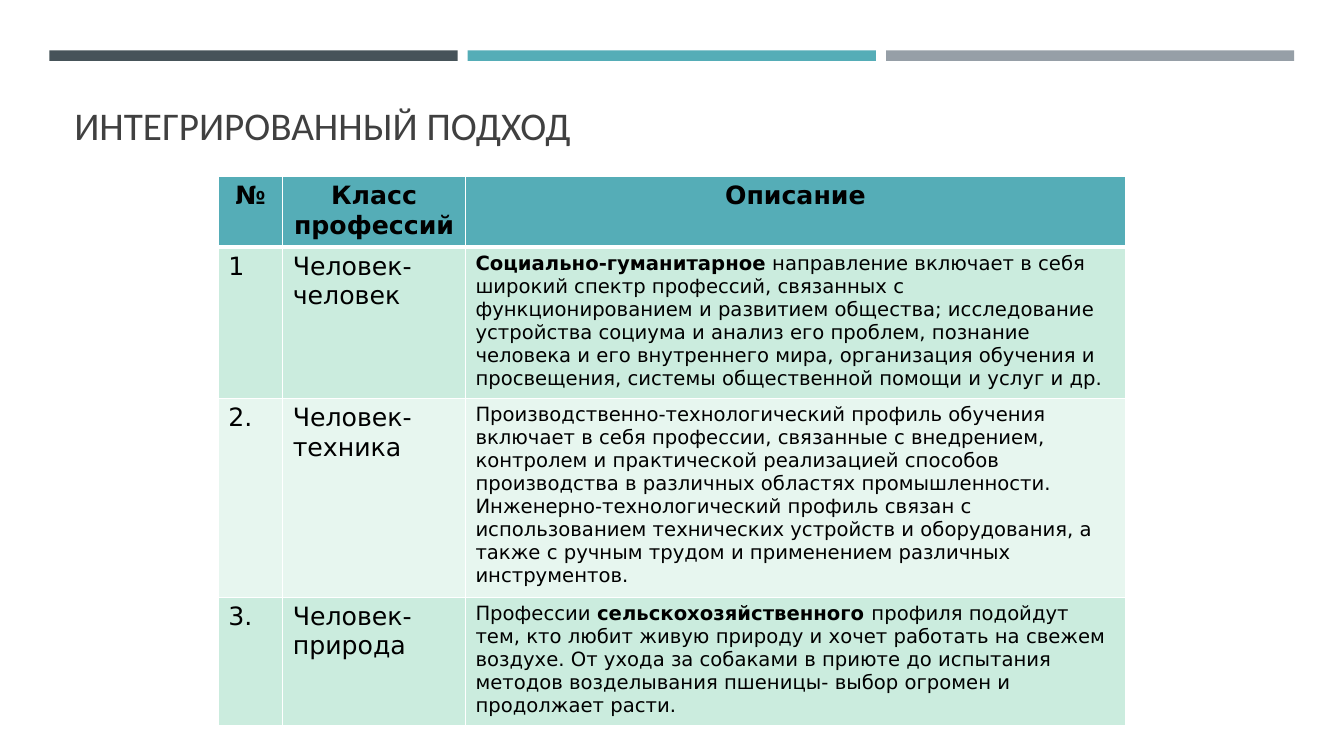
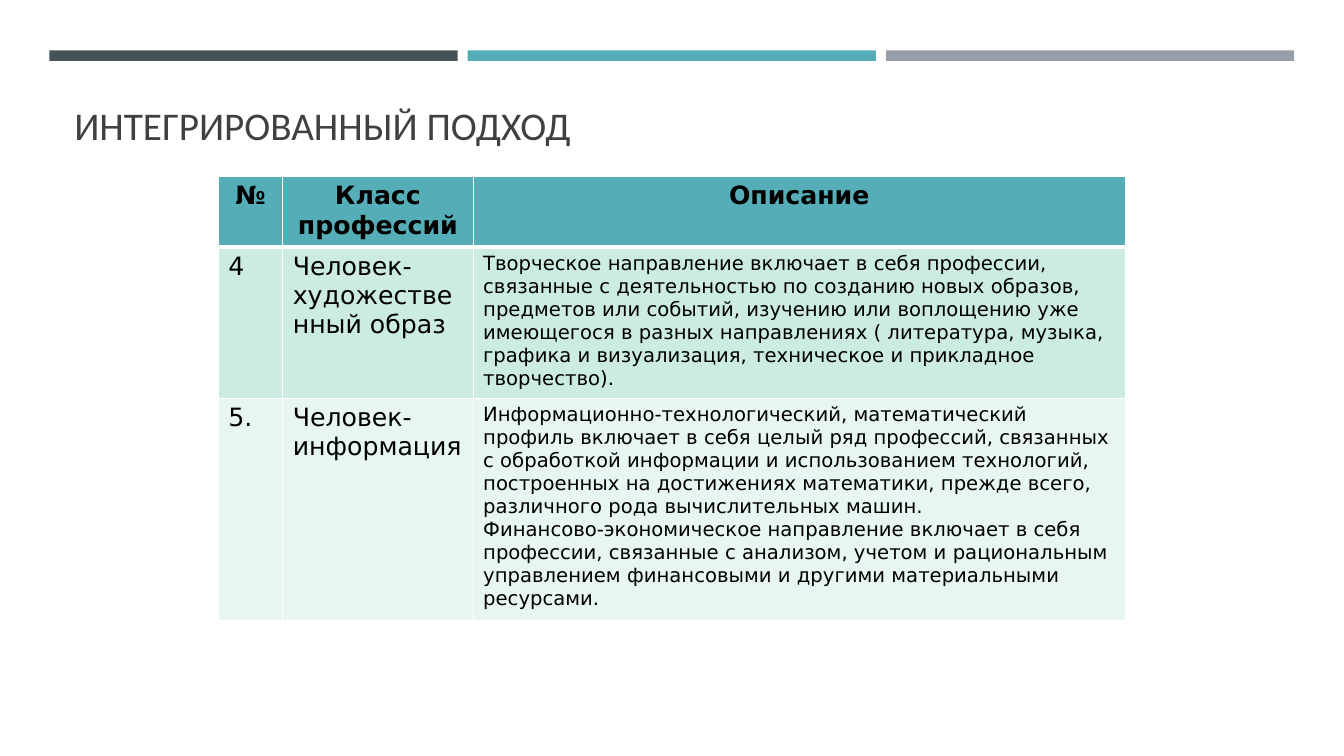
import pptx
import pptx.util
import pptx.dml.color
import pptx.enum.shapes
import pptx.enum.text
import pptx.oxml
import pptx.oxml.ns

Pt = pptx.util.Pt
Rgb = pptx.dml.color.RGBColor.from_string
Align = pptx.enum.text.PP_ALIGN


class Theme:
    dark, teal, grey = "465359", "55ADB7", "969FA7"
    bands = ["CBECDE", "E7F6EF"]
    white, black, title = "FFFFFF", "000000", "404040"
    head_font, body_font = "Calibri", "DejaVu Sans"
    head_size, cell_size, note_size = 28, 18, 14


def write(frame, text, size=Theme.cell_size, font=Theme.body_font,
          color=Theme.black, bold=False, align=Align.LEFT):
    """Lines become paragraphs; text between asterisks is bold."""
    frame.word_wrap = True
    for i, line in enumerate(text.split("\n")):
        para = frame.add_paragraph() if i else frame.paragraphs[0]
        para.alignment = align
        for j, part in enumerate(line.split("*")):
            if part:
                run = para.add_run()
                run.text = part
                run.font.size = Pt(size)
                run.font.name = font
                run.font.bold = bold or j % 2 == 1
                run.font.color.rgb = Rgb(color)


def edge(cell, widths):
    """Draw white cell borders; widths run left, right, top, bottom."""
    props = cell._tc.get_or_add_tcPr()
    for i, (side, width) in enumerate(zip("LRTB", widths)):
        props.insert(i, pptx.oxml.parse_xml(
            f'<a:ln{side} {pptx.oxml.ns.nsdecls("a")} w="{Pt(width)}">'
            f'<a:solidFill><a:srgbClr val="{Theme.white}"/></a:solidFill>'
            f'</a:ln{side}>'))


# Content
title = "ИНТЕГРИРОВАННЫЙ ПОДХОД"
heads = ["№", "Класс профессий", "Описание"]
pages = [
    dict(cols=[46, 130.5, 471.5], rows=[50.5, 108, 142, 91.5], items=[
        ("1", "Человек-человек",
         "*Социально-гуманитарное* направление включает в себя широкий спектр "
         "профессий, связанных с функционированием и развитием общества; "
         "исследование устройства социума и анализ его проблем, познание "
         "человека и его внутреннего мира, организация обучения и "
         "просвещения, системы общественной помощи и услуг и др."),
        ("2.", "Человек-техника",
         "Производственно-технологический профиль обучения включает в себя "
         "профессии, связанные с внедрением, контролем и практической "
         "реализацией способов производства в различных областях "
         "промышленности.\n"
         "Инженерно-технологический профиль связан с использованием "
         "технических устройств и оборудования, а также с ручным трудом и "
         "применением различных инструментов."),
        ("3.", "Человек-природа",
         "Профессии *сельскохозяйственного *профиля подойдут тем, кто любит "
         "живую природу и хочет работать на свежем воздухе. От ухода за "
         "собаками в приюте до испытания методов возделывания пшеницы- "
         "выбор огромен и продолжает расти."),
    ]),
    dict(cols=[46, 136, 466], rows=[48.5, 105.5, 155], items=[
        ("4", "Человек-художественный образ",
         "Творческое направление включает в себя профессии, связанные с "
         "деятельностью по созданию новых образов, предметов или событий, "
         "изучению или воплощению уже имеющегося в разных направлениях "
         "( литература, музыка, графика и визуализация, техническое и "
         "прикладное творчество)."),
        ("5.", "Человек-информация",
         "Информационно-технологический, математический профиль включает в "
         "себя целый ряд профессий, связанных с обработкой информации и "
         "использованием технологий, построенных на достижениях математики, "
         "прежде всего, различного рода вычислительных машин.\n"
         "Финансово-экономическое направление включает в себя профессии, "
         "связанные с анализом, учетом и рациональным управлением "
         "финансовыми и другими материальными ресурсами."),
    ]),
]

deck = pptx.Presentation()
deck.slide_width, deck.slide_height = Pt(960), Pt(540)

for page in pages:
    slide = deck.slides.add_slide(deck.slide_layouts[6])

    # Top bands
    for i, color in enumerate([Theme.dark, Theme.teal, Theme.grey]):
        bar = slide.shapes.add_shape(
            pptx.enum.shapes.MSO_SHAPE.RECTANGLE,
            Pt(35.3 + i * 298.8), Pt(36), Pt(291.6), Pt(7.5))
        bar.shadow.inherit = False
        bar.fill.solid()
        bar.fill.fore_color.rgb = Rgb(color)
        bar.line.fill.background()

    # Title
    box = slide.shapes.add_textbox(Pt(46), Pt(55.5), Pt(868), Pt(54))
    box.text_frame.vertical_anchor = pptx.enum.text.MSO_ANCHOR.BOTTOM
    write(box.text_frame, title, size=Theme.head_size,
          font=Theme.head_font, color=Theme.title)

    # Table
    cols, rows = page["cols"], page["rows"]
    table = slide.shapes.add_table(
        len(rows), len(cols), Pt(156), Pt(126),
        Pt(sum(cols)), Pt(sum(rows))).table
    for col, width in zip(table.columns, cols):
        col.width = Pt(width)
    for row, height in zip(table.rows, rows):
        row.height = Pt(height)

    # Cells
    for r, texts in enumerate([heads] + page["items"]):
        for c, text in enumerate(texts):
            cell = table.cell(r, c)
            cell.fill.solid()
            if r == 0:
                fill = Theme.teal
                write(cell.text_frame, text, bold=True, align=Align.CENTER)
            else:
                fill = Theme.bands[(r - 1) % 2]
                size = Theme.note_size if c == 2 else Theme.cell_size
                write(cell.text_frame, text, size=size)
            cell.fill.fore_color.rgb = Rgb(fill)
            edge(cell, [1, 1, 3 if r == 1 else 1, 3 if r == 0 else 1])

deck.save("out.pptx")
